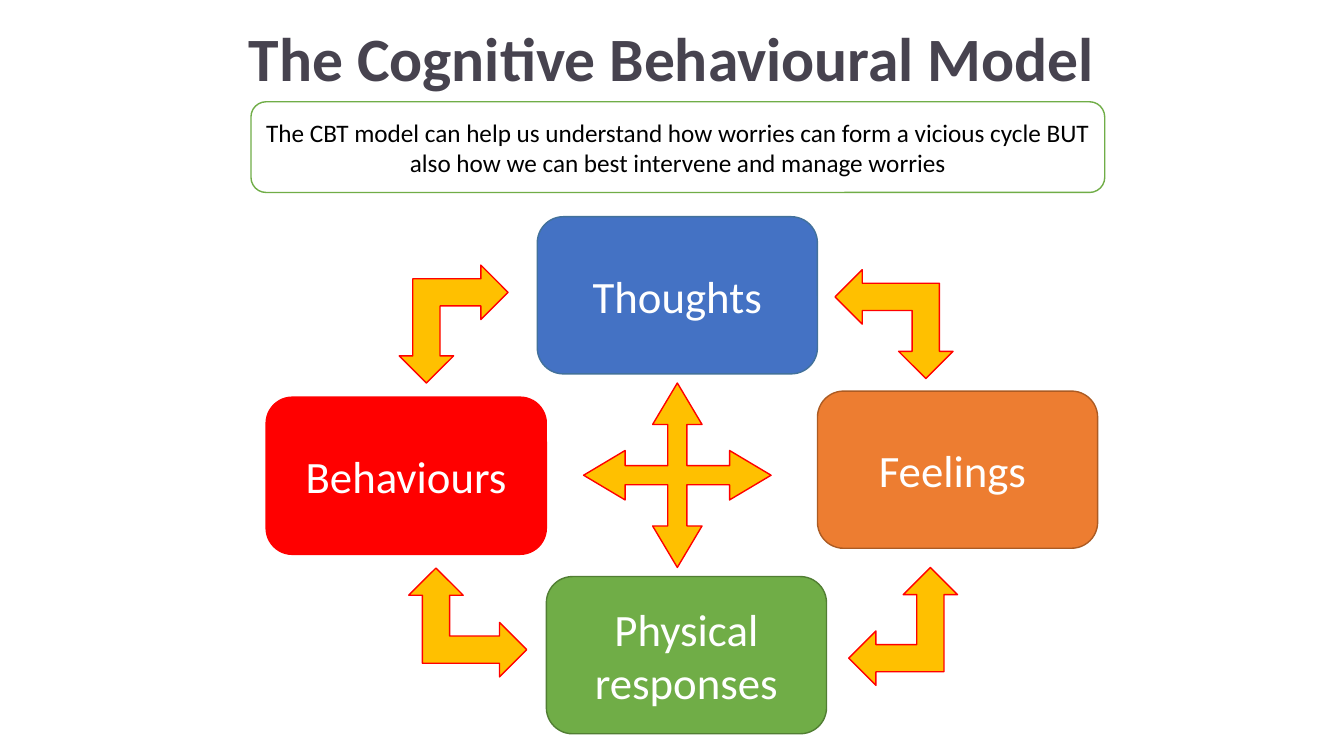
from pptx import Presentation
from pptx.dml.color import RGBColor
from pptx.enum.shapes import MSO_SHAPE
from pptx.enum.text import MSO_ANCHOR, PP_ALIGN
from pptx.util import Pt

ROUNDED = MSO_SHAPE.ROUNDED_RECTANGLE
QUAD_ARROW = MSO_SHAPE.QUAD_ARROW
CORNER_ARROW = MSO_SHAPE.LEFT_UP_ARROW
CENTER = PP_ALIGN.CENTER
MIDDLE = MSO_ANCHOR.MIDDLE

FONT = "Calibri"
NODE_SIZE = (200.16, 112.32)
CORNER_SIZE = (77.76, 84.24)

NODES = [
    ("Thoughts", 383.76, 154.8, "4472C4", "42719B"),
    ("Behaviours", 190.08, 283.68, "FF0000", "FF0000"),
    ("Feelings ", 583.92, 279.36, "ED7D31", "AC5B23"),
    ("Physical responses", 390.24, 411.84, "70AD47", "517E33"),
]
CORNERS = [
    (606.24, 405.36, 0),
    (599.76, 189.36, 270),
    (295.2, 402.48, 90),
    (285.12, 189.36, 180),
]


def color(value):
    """Return an RGB colour from a hex string."""
    return RGBColor.from_string(value)


def write(sp, text, size, ink, bold=False):
    """Put one centred run of text into a shape and return its paragraph."""
    tf = sp.text_frame
    tf.word_wrap = True
    p = tf.paragraphs[0]
    p.alignment = CENTER
    r = p.add_run()
    r.text = text
    r.font.name = FONT
    r.font.size = Pt(size)
    r.font.bold = bold
    r.font.color.rgb = color(ink)
    return p


def add_title(s, text):
    """Add the slide title across the full width."""
    sp = s.shapes.add_textbox(Pt(0), Pt(16.56), Pt(960), Pt(56.16))
    p = write(sp, text, 44, "47434F", bold=True)
    p.line_spacing = 0.9


def add_shape(s, kind, x, y, size, fill, line):
    """Add a flat preset shape with a one-point outline."""
    w, h = size
    sp = s.shapes.add_shape(kind, Pt(x), Pt(y), Pt(w), Pt(h))
    sp.shadow.inherit = False
    sp.fill.solid()
    sp.fill.fore_color.rgb = color(fill)
    sp.line.color.rgb = color(line)
    sp.line.width = Pt(1)
    return sp


def add_box(s, text, x, y, size, fill, line, text_size=32, ink="FFFFFF"):
    """Add a rounded box with centred text."""
    sp = add_shape(s, ROUNDED, x, y, size, fill, line)
    sp.text_frame.vertical_anchor = MIDDLE
    write(sp, text, text_size, ink)


def add_arrow(s, kind, x, y, size, rotation=0):
    """Add a red-edged amber arrow."""
    sp = add_shape(s, kind, x, y, size, "FFC000", "FF0000")
    sp.rotation = rotation
    return sp


def main():
    """Build the slide and save it."""
    prs = Presentation()
    prs.slide_width, prs.slide_height = Pt(960), Pt(540)
    s = prs.slides.add_slide(prs.slide_layouts[6])

    add_title(s, "The Cognitive Behavioural Model")
    add_box(s, "The CBT model can help us understand how worries can form a "
            "vicious cycle BUT also how we can best intervene and manage worries",
            179.28, 72.72, (609.84, 64.8), "FFFFFF", "70AD47", 18, "000000")
    for text, x, y, fill, line in NODES:
        add_box(s, text, x, y, NODE_SIZE, fill, line)

    cross = add_arrow(s, QUAD_ARROW, 416.88, 273.6, (133.92, 131.76))
    for i, value in enumerate((0.104, 0.134, 0.225)):
        cross.adjustments[i] = value
    for x, y, rotation in CORNERS:
        add_arrow(s, CORNER_ARROW, x, y, CORNER_SIZE, rotation)

    prs.save("out.pptx")


if __name__ == "__main__":
    main()
